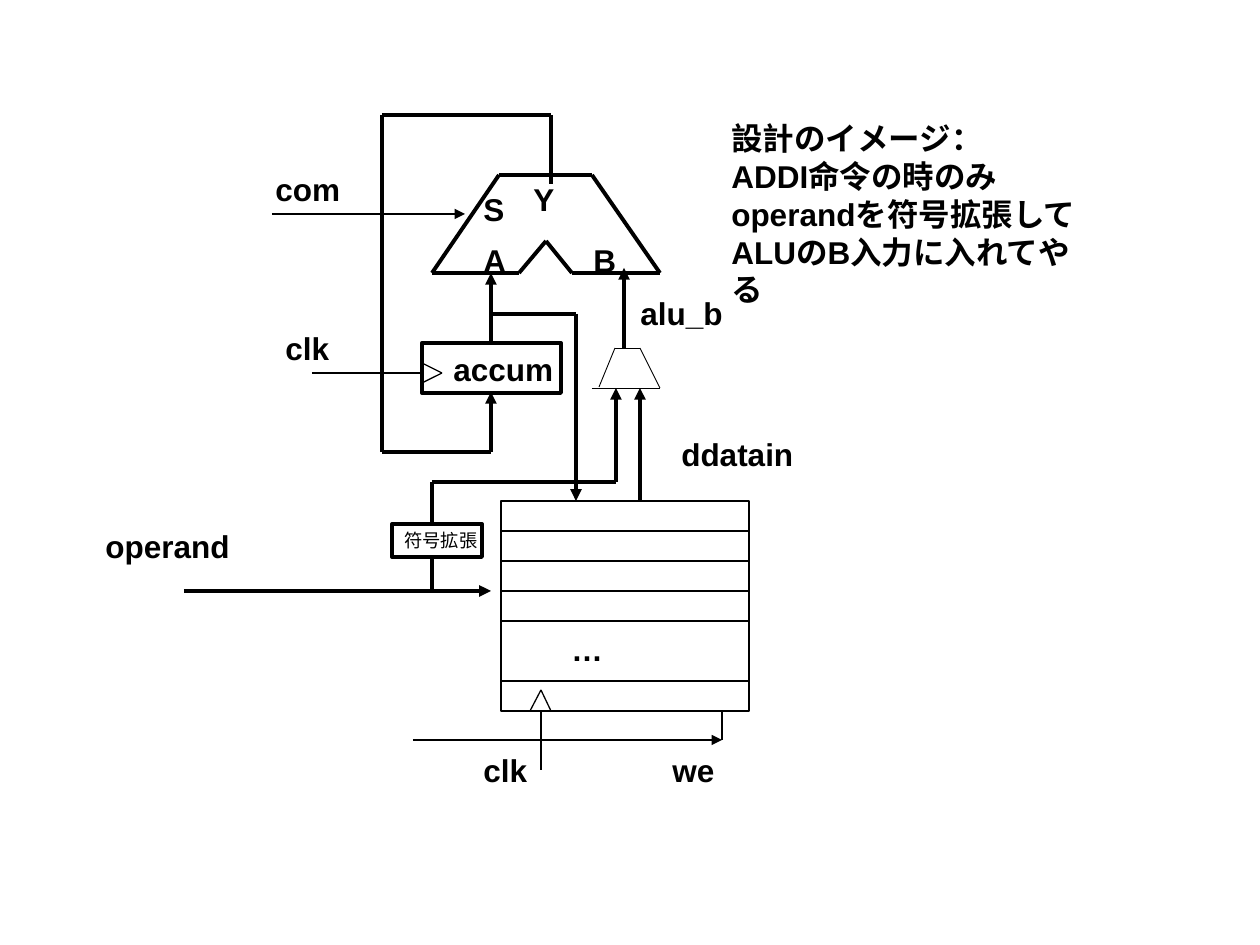
from dataclasses import dataclass
from itertools import pairwise

from pptx import Presentation
from pptx import util as u
from pptx.dml.color import RGBColor
from pptx.enum import shapes, text
from pptx.oxml.ns import qn
from lxml import etree

PX = u.Inches(1) / 126


@dataclass(frozen=True)
class Theme:
    ink: RGBColor = RGBColor(0, 0, 0)
    paper: RGBColor = RGBColor(255, 255, 255)
    font: str = "Arial"
    label: float = 18
    small: float = 10.5
    bold_line: float = 2.25
    thin_line: float = 0.75
    fine_line: float = 0.5


THEME = Theme()
BOLD, THIN, FINE = THEME.bold_line, THEME.thin_line, THEME.fine_line

# Each path: points, line weight, arrowhead at the last point
ALU = [(499, 175), (592, 175), (660, 273), (572, 273), (546, 241),
       (519, 273), (432, 273), (499, 175)]
MUX = [(592, 388), (660, 388), (640, 348), (615, 348), (599, 387)]
FEEDBACK = [(551, 184), (551, 115), (382, 115), (382, 452), (491, 452), (491, 392)]
SIGN_EXTENDED = [(432, 591), (432, 482), (616, 482), (616, 388)]
PATHS = [
    (ALU, BOLD, False),
    (MUX, FINE, False),
    (FEEDBACK, BOLD, True),
    (SIGN_EXTENDED, BOLD, True),
    ([(491, 343), (491, 273)], BOLD, True),              # accum to ALU A
    ([(491, 314), (576, 314), (576, 501)], BOLD, True),  # accum to memory
    ([(640, 501), (640, 388)], BOLD, True),              # ddatain to mux
    ([(624, 348), (624, 268)], BOLD, True),              # mux to ALU B
    ([(184, 591), (491, 591)], BOLD, True),              # operand
    ([(272, 214), (465, 214)], THIN, True),              # com
    ([(312, 373), (422, 373)], THIN, False),             # accum clk
    ([(422, 363), (442, 373), (422, 383)], THIN, False),
    ([(541, 770), (541, 711)], THIN, False),             # memory clk
    ([(530, 711), (541, 690), (551, 711)], THIN, False),
    ([(413, 740), (722, 740)], THIN, True),              # we
    ([(722, 740), (722, 711)], THIN, False),
]

MEMORY_LEFT, MEMORY_TOP, MEMORY_WIDTH = 501, 501, 248
MEMORY_ROWS = [30, 30, 30, 30, 60, 30]
ACCUM_BOX = (422, 343, 139, 50)
SIGN_BOX = (392, 524, 90, 33)
SIGN_TEXT = "符号拡張"

LABEL_HEIGHT = 50
LABELS = [  # text, left, top, width
    ("A", 471, 235, 48),
    ("B", 581, 235, 48),
    ("Y", 521, 174, 46),
    ("S", 471, 184, 46),
    ("…", 559, 624, 56),
    ("we", 660, 745, 161),
    ("clk", 471, 745, 69),
    ("clk", 273, 323, 69),
    ("com", 263, 164, 91),
    ("operand", 93, 521, 151),
    ("alu_b", 628, 288, 108),
    ("ddatain", 669, 429, 139),
    ("accum", 441, 344, 126),
]
NOTE = ["設計のイメージ：", "ADDI命令の時のみ", "operandを符号拡張して", "ALUのB入力に入れてやる"]
NOTE_AREA = (719, 113, 392, 165)


def emu(*lengths):
    return [u.Emu(round(length * PX)) for length in lengths]


def style_text(frame, size, bold):
    for para in frame.paragraphs:
        para.alignment = text.PP_ALIGN.LEFT
        for span in para.runs:
            span.font.name = THEME.font
            span.font.size = u.Pt(size)
            span.font.bold = bold
            span.font.color.rgb = THEME.ink


def add_segment(page, start, end, weight, arrow):
    line = page.shapes.add_connector(shapes.MSO_CONNECTOR.STRAIGHT, *emu(*start, *end))
    line.line.color.rgb = THEME.ink
    line.line.width = u.Pt(weight)
    if arrow:
        etree.SubElement(line.line._get_or_add_ln(), qn("a:tailEnd"), type="triangle")
    etree.SubElement(line._element.spPr, qn("a:effectLst"))


def add_path(page, points, weight, arrow):
    """Join the points by straight lines, with any arrowhead on the last one."""
    segments = list(pairwise(points))
    for number, (start, end) in enumerate(segments, 1):
        add_segment(page, start, end, weight, arrow and number == len(segments))


def add_box(page, area, weight, fill=None):
    box = page.shapes.add_shape(shapes.MSO_SHAPE.RECTANGLE, *emu(*area))
    box.shadow.inherit = False
    if fill is None:
        box.fill.background()
    else:
        box.fill.solid()
        box.fill.fore_color.rgb = fill
    box.line.color.rgb = THEME.ink
    box.line.width = u.Pt(weight)
    return box


def add_label(page, words, area, wrap=False):
    frame = page.shapes.add_textbox(*emu(*area)).text_frame
    frame.text = words
    frame.word_wrap = wrap
    frame.auto_size = text.MSO_AUTO_SIZE.SHAPE_TO_FIT_TEXT
    style_text(frame, THEME.label, True)


def add_memory(page):
    top = MEMORY_TOP
    for height in MEMORY_ROWS:
        add_box(page, (MEMORY_LEFT, top, MEMORY_WIDTH, height), THIN)
        top += height


def main():
    deck = Presentation()
    deck.slide_width, deck.slide_height = u.Inches(10), u.Inches(7.5)
    page = deck.slides.add_slide(deck.slide_layouts[6])

    add_memory(page)
    for points, weight, arrow in PATHS:
        add_path(page, points, weight, arrow)
    add_box(page, ACCUM_BOX, BOLD)

    sign = add_box(page, SIGN_BOX, BOLD, THEME.paper).text_frame
    sign.text = SIGN_TEXT
    sign.word_wrap = False
    sign.vertical_anchor = text.MSO_ANCHOR.MIDDLE
    style_text(sign, THEME.small, False)

    for words, left, top, width in LABELS:
        add_label(page, words, (left, top, width, LABEL_HEIGHT), wrap=words == "we")
    add_label(page, "\n".join(NOTE), NOTE_AREA, wrap=True)

    deck.save("out.pptx")


if __name__ == "__main__":
    main()
